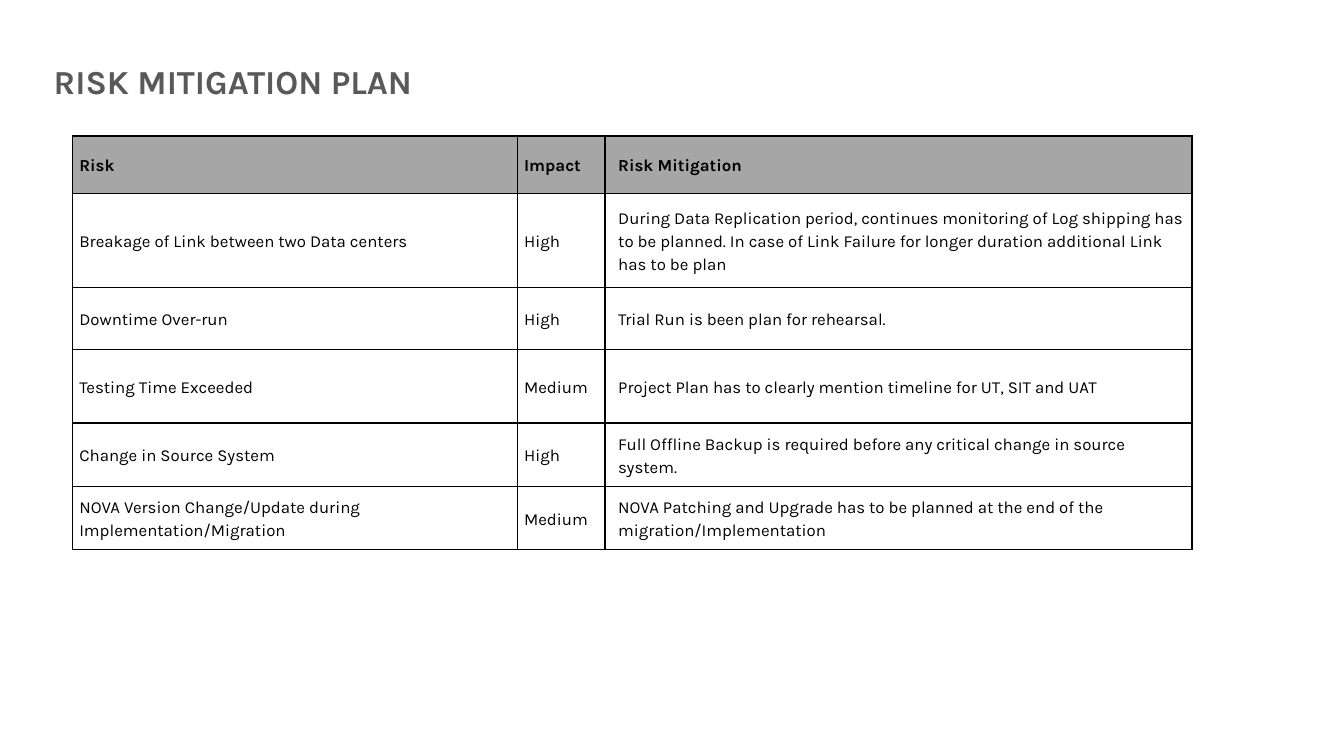
import pptx
import pptx.util
import pptx.dml.color
import pptx.enum.text
import pptx.oxml.ns
from lxml import etree

Inches, Pt = pptx.util.Inches, pptx.util.Pt
MIDDLE = pptx.enum.text.MSO_ANCHOR.MIDDLE

COLORS = {"title": "595959", "text": "000000", "border": "000000", "header": "A6A6A6"}
FONT = "Karla"

TITLE = "RISK MITIGATION PLAN"
HEADER = ("Risk", "Impact", "Risk Mitigation")
RISKS = [
    ("Breakage of Link between two Data centers", "High",
     "During Data Replication period, continues monitoring of Log shipping has to be planned. "
     "In case of Link Failure for longer duration additional Link has to be plan"),
    ("Downtime Over-run", "High", "Trial Run is been plan for rehearsal."),
    ("Testing Time Exceeded", "Medium",
     "Project Plan has to clearly mention timeline for UT, SIT and UAT"),
    ("Change in Source System", "High",
     "Full Offline Backup is required before any critical change in source system."),
    ("NOVA Version Change/Update during Implementation/Migration", "Medium",
     "NOVA Patching and Upgrade has to be planned at the end of the migration/Implementation"),
]
COLUMN_WIDTHS = (3.31, 0.65, 4.37)
ROW_HEIGHTS = (0.43, 0.7, 0.46, 0.55, 0.47, 0.47)
COLUMN_INDENTS = (0, 0, 0.05)


def rgb(name):
    return pptx.dml.color.RGBColor.from_string(COLORS[name])


def add_span(para, text, size, color, bold):
    span = para.add_run()
    span.text = text
    span.font.name = FONT
    span.font.size = Pt(size)
    span.font.bold = bold
    span.font.color.rgb = rgb(color)


def set_margins(target, left, top, right, bottom):
    target.margin_left, target.margin_top = Inches(left), Inches(top)
    target.margin_right, target.margin_bottom = Inches(right), Inches(bottom)


def add_borders(cell):
    """Draw all four sides; call before the fill, which must follow them in the XML."""
    qn = pptx.oxml.ns.qn
    properties = cell._tc.get_or_add_tcPr()
    for side in ("a:lnL", "a:lnR", "a:lnT", "a:lnB"):
        line = etree.SubElement(properties, qn(side), w=str(Pt(1)))
        fill = etree.SubElement(line, qn("a:solidFill"))
        etree.SubElement(fill, qn("a:srgbClr"), val=COLORS["border"])


def add_title(page):
    box = page.shapes.add_textbox(Inches(0.4), Inches(0.4), Inches(8.24), Inches(0.4))
    frame = box.text_frame
    frame.word_wrap = True
    frame.vertical_anchor = MIDDLE
    set_margins(frame, 0, 0.05, 0.1, 0.05)
    add_span(frame.paragraphs[0], TITLE, 18, "title", True)


def fill_cell(cell, text, indent, is_header):
    cell.vertical_anchor = MIDDLE
    set_margins(cell, 0.05, 0, 0.05, 0)
    add_borders(cell)
    if is_header:
        cell.fill.solid()
        cell.fill.fore_color.rgb = rgb("header")
    else:
        cell.fill.background()
    para = cell.text_frame.paragraphs[0]
    para.line_spacing = 1.15
    if indent:
        para_properties = para._p.get_or_add_pPr()
        para_properties.set("marL", str(Inches(indent)))
        para_properties.set("indent", "0")
    add_span(para, text, 9, "text", is_header)


def add_risk_table(page):
    rows = [HEADER] + RISKS
    table = page.shapes.add_table(
        len(rows), len(HEADER), Inches(0.54), Inches(1.01),
        Inches(sum(COLUMN_WIDTHS)), Inches(sum(ROW_HEIGHTS))).table
    table.horz_banding = False
    for column, width in zip(table.columns, COLUMN_WIDTHS):
        column.width = Inches(width)
    for row, height in zip(table.rows, ROW_HEIGHTS):
        row.height = Inches(height)
    for r, texts in enumerate(rows):
        for c, (text, indent) in enumerate(zip(texts, COLUMN_INDENTS)):
            fill_cell(table.cell(r, c), text, indent, r == 0)


def main():
    deck = pptx.Presentation()
    deck.slide_width = Inches(10)
    deck.slide_height = deck.slide_width * 9 // 16
    page = deck.slides.add_slide(deck.slide_layouts[6])
    add_title(page)
    add_risk_table(page)
    deck.save("out.pptx")


if __name__ == "__main__":
    main()
